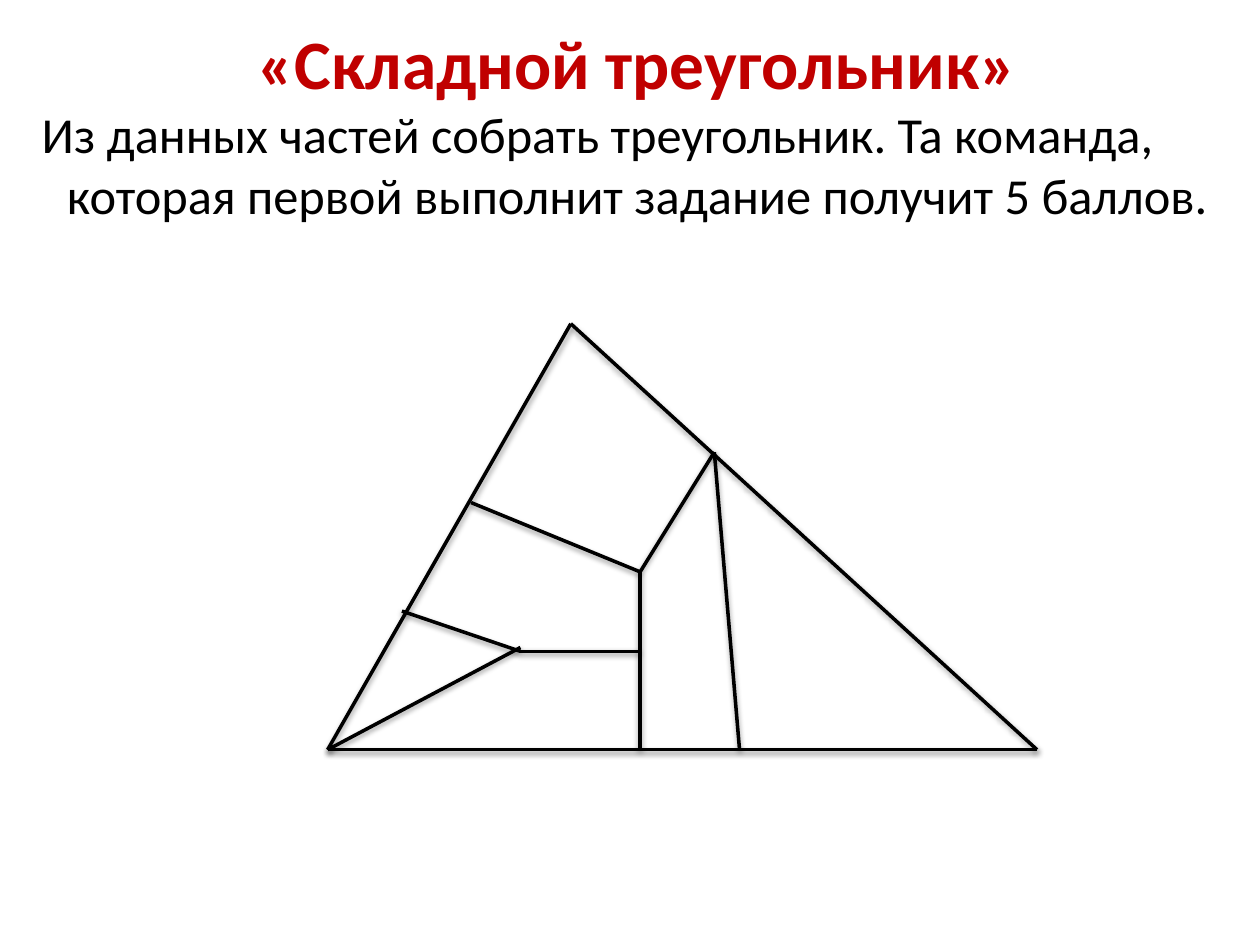
import pptx
import pptx.util
import pptx.dml.color
import pptx.enum.shapes
import pptx.enum.text
import pptx.oxml
import pptx.oxml.ns

Pt = pptx.util.Pt
RED = pptx.dml.color.RGBColor(0xC0, 0x00, 0x00)
BLACK = pptx.dml.color.RGBColor(0x00, 0x00, 0x00)
SHADOW = (
    f'<a:effectLst {pptx.oxml.ns.nsdecls("a")}>'
    '<a:outerShdw blurRad="40000" dist="20000" dir="5400000" rotWithShape="0">'
    '<a:srgbClr val="000000"><a:alpha val="38000"/></a:srgbClr>'
    '</a:outerShdw></a:effectLst>'
)


def style_text(para, size, color, bold, align):
    """Set the font and alignment of one paragraph."""
    para.alignment = align
    para.font.name = "Calibri"
    para.font.size = Pt(size)
    para.font.bold = bold
    para.font.color.rgb = color


def add_title(slide, left, top, width, height):
    """Place the game's name and its task in the title placeholder."""
    title = slide.shapes.title
    title.left, title.top = Pt(left), Pt(top)
    title.width, title.height = Pt(width), Pt(height)
    frame = title.text_frame
    frame.word_wrap = True
    frame.auto_size = pptx.enum.text.MSO_AUTO_SIZE.NONE
    frame.vertical_anchor = pptx.enum.text.MSO_ANCHOR.MIDDLE
    align = pptx.enum.text.PP_ALIGN
    name = frame.paragraphs[0]
    name.text = "«Складной треугольник»"
    style_text(name, 39.6, RED, True, align.CENTER)
    task = frame.add_paragraph()
    task.text = ("Из данных частей собрать треугольник. Та команда, "
                 "которая первой выполнит задание получит 5 баллов.")
    props = task._p.get_or_add_pPr()
    props.set("marL", str(Pt(22.4)))
    props.set("indent", str(Pt(-14.4)))
    style_text(task, 28.8, BLACK, False, align.LEFT)


def add_puzzle(slide, left, top, width, height):
    """Draw the triangle and the cuts between its parts."""
    peak, start, end = (139, 0), (0, height), (width, height)
    side, hub, joint = (221, 73.4), (178.6, 141.8), (110.2, 187.2)
    mid = hub[0]
    lines = [
        (peak, start), (peak, end), (end, start),
        (side, hub), (hub, (82, 102.2)), (side, (235.4, height)),
        (hub, (mid, height)), ((mid, joint[1]), joint),
        (joint, (42.5, 164.2)), ((joint[0], 185), start),
    ]
    for (x1, y1), (x2, y2) in lines:
        line = slide.shapes.add_connector(
            pptx.enum.shapes.MSO_CONNECTOR.STRAIGHT,
            Pt(left + x1), Pt(top + y1), Pt(left + x2), Pt(top + y2))
        line.line.color.rgb = BLACK
        line.line.width = Pt(2)
        line._element.spPr.append(pptx.oxml.parse_xml(SHADOW))


def main():
    """Build and save the slide."""
    deck = pptx.Presentation()
    deck.slide_width, deck.slide_height = Pt(720), Pt(540)
    slide = deck.slides.add_slide(deck.slide_layouts[5])
    add_title(slide, 8.64, 0, 711.36, 139.7)
    add_puzzle(slide, 187.2, 185, 405.4, 243.4)
    deck.save("out.pptx")


if __name__ == "__main__":
    main()
